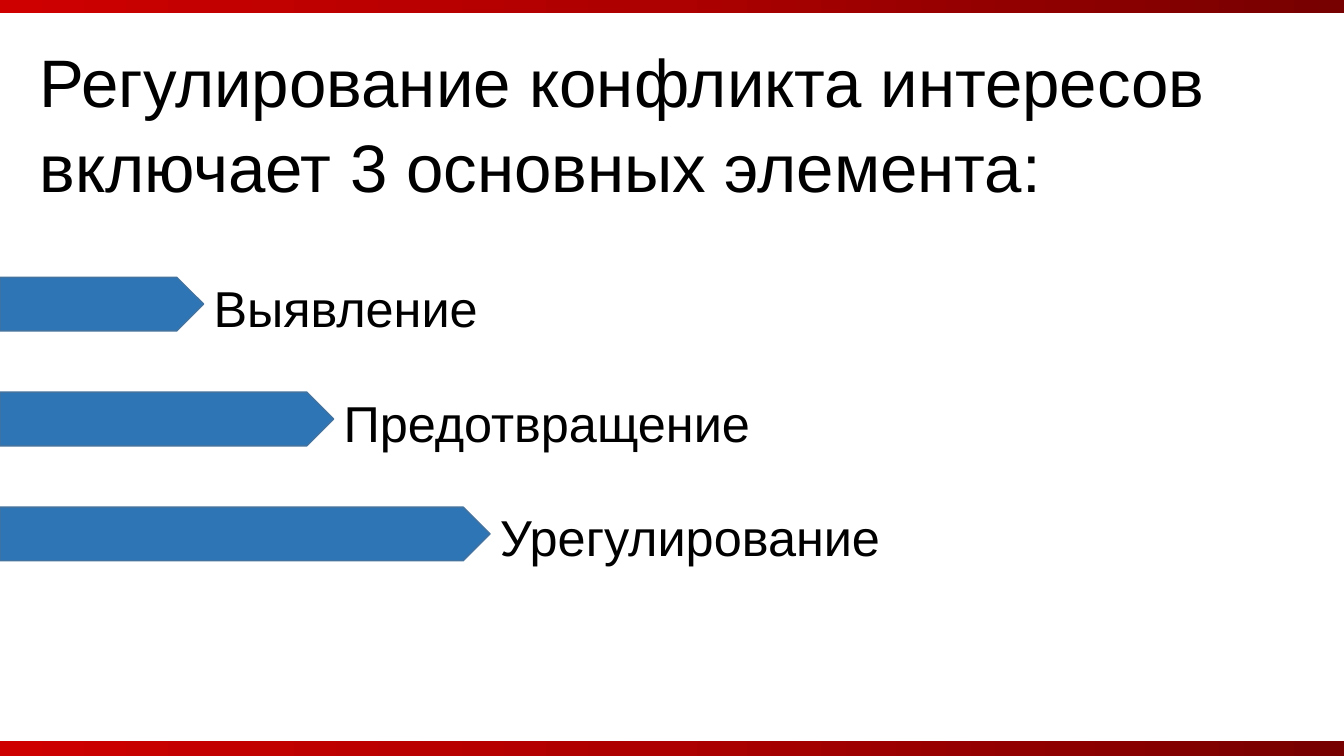
import copy
from dataclasses import dataclass

import pptx
import pptx.dml.color
import pptx.enum.shapes
import pptx.enum.text
import pptx.oxml.ns
import pptx.util

SLIDE_WIDTH = pptx.util.Inches(13.33)
SLIDE_HEIGHT = pptx.util.Inches(7.5)

# Shares of the slide, in percent
BAND_TOPS = (98, -0.27)
BAND_HEIGHT = 2
FIRST_ARROW_TOP = 36.67
ARROW_PITCH = 15.2
ARROW_HEIGHT = 7.1
LABEL_RISE = 1.2
LABEL_HEIGHT = 9.47

BAND_COLOURS = ("CE0000", "AD0000", "770000")
LINE_SPACING = 1.06


@dataclass
class Element:
    label: str
    arrow_width: float
    label_width: float


ELEMENTS = (
    Element("Выявление", 15.15, 21.38),
    Element("Предотвращение", 24.83, 32.03),
    Element("Урегулирование", 36.46, 30.08),
)


def across(percent: float) -> int:
    return round(SLIDE_WIDTH * percent / 100)


def down(percent: float) -> int:
    return round(SLIDE_HEIGHT * percent / 100)


def colour(hex_value: str) -> pptx.dml.color.RGBColor:
    return pptx.dml.color.RGBColor.from_string(hex_value)


def write(frame, text: str, size: int, wrap: bool) -> None:
    frame.text = text
    frame.word_wrap = wrap
    frame.vertical_anchor = pptx.enum.text.MSO_ANCHOR.TOP
    paragraph = frame.paragraphs[0]
    paragraph.alignment = pptx.enum.text.PP_ALIGN.LEFT
    paragraph.line_spacing = LINE_SPACING
    paragraph.font.name = "Arial"
    paragraph.font.size = pptx.util.Pt(size)
    paragraph.font.color.rgb = colour("000000")


def draw_band(slide, top: float) -> None:
    band = slide.shapes.add_shape(
        pptx.enum.shapes.MSO_SHAPE.RECTANGLE,
        0, down(top), SLIDE_WIDTH, down(BAND_HEIGHT))
    band.shadow.inherit = False
    band.line.fill.background()
    band.fill.gradient()
    band.fill.gradient_angle = 0
    # The default gradient has two stops; add a third between them
    stop_list = band.fill._fill._gradFill.find(pptx.oxml.ns.qn("a:gsLst"))
    stop_list.insert(1, copy.deepcopy(stop_list[0]))
    for stop, position, hex_value in zip(
            band.fill.gradient_stops, (0, 0.5, 1), BAND_COLOURS):
        stop.position = position
        stop.color.rgb = colour(hex_value)


def draw_title(slide) -> None:
    title = slide.shapes.title
    title.left, title.top = across(2.18), down(4)
    title.width, title.height = across(96), down(22.93)
    write(title.text_frame,
          "Регулирование конфликта интересов включает 3 основных элемента:",
          48, wrap=True)


def draw_element(slide, element: Element, top: float) -> None:
    arrow = slide.shapes.add_shape(
        pptx.enum.shapes.MSO_SHAPE.PENTAGON,
        0, down(top), across(element.arrow_width), down(ARROW_HEIGHT))
    arrow.shadow.inherit = False
    arrow.fill.solid()
    arrow.fill.fore_color.rgb = colour("2E75B6")
    arrow.line.color.rgb = colour("43739E")
    arrow.line.width = pptx.util.Pt(1)

    # The label starts at the arrow's tip
    label = slide.shapes.add_textbox(
        across(element.arrow_width), down(top - LABEL_RISE),
        across(element.label_width), down(LABEL_HEIGHT))
    write(label.text_frame, element.label, 36, wrap=False)


def main() -> None:
    presentation = pptx.Presentation()
    presentation.slide_width = SLIDE_WIDTH
    presentation.slide_height = SLIDE_HEIGHT
    title_only = presentation.slide_layouts[5]
    slide = presentation.slides.add_slide(title_only)

    for top in BAND_TOPS:
        draw_band(slide, top)
    draw_title(slide)
    for row, element in enumerate(ELEMENTS):
        draw_element(slide, element, FIRST_ARROW_TOP + row * ARROW_PITCH)

    presentation.save("out.pptx")


if __name__ == "__main__":
    main()
